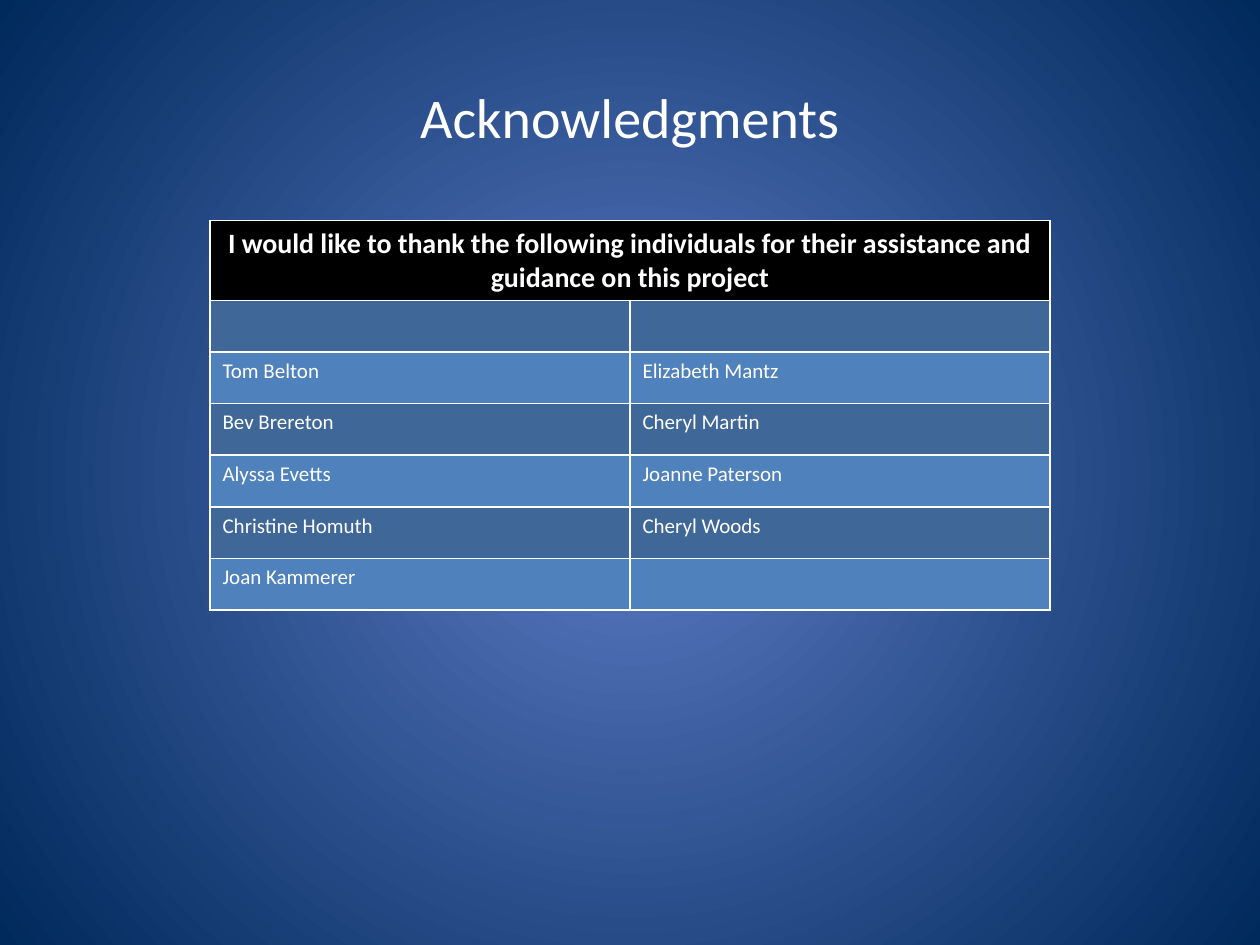
from lxml import etree
from pptx import Presentation
from pptx.dml.color import RGBColor
from pptx.enum.text import MSO_ANCHOR, PP_ALIGN
from pptx.oxml.ns import qn
from pptx.util import Inches, Pt

CENTER, LEFT = PP_ALIGN.CENTER, PP_ALIGN.LEFT
MIDDLE = MSO_ANCHOR.MIDDLE
FONT = "Calibri"
WHITE, BLACK = "FFFFFF", "000000"
BANDS = "3F6797", "4F81BD"
GLOW, NAVY = "5E7CC5", "00295C"
WIDE, HIGH = 10, 7.5
ROW = 0.41

THANKS = ("I would like to thank the following individuals "
          "for their assistance and guidance on this project")
NAMES = [
    ("", ""),
    ("Tom Belton", "Elizabeth Mantz"),
    ("Bev Brereton", "Cheryl Martin"),
    ("Alyssa Evetts", "Joanne Paterson"),
    ("Christine Homuth", "Cheryl Woods"),
    ("Joan Kammerer", ""),
]


def color(code):
    return RGBColor.from_string(code)


def write(frame, text, size, align=LEFT, bold=False):
    frame.text = text
    para = frame.paragraphs[0]
    para.alignment = align
    for font in [para.font] + [run.font for run in para.runs]:
        font.name, font.size, font.bold = FONT, Pt(size), bold
        font.color.rgb = color(WHITE)


def backdrop(slide):
    """Fill the background with a glow that spreads from the centre."""
    fill = slide.background.fill
    fill.gradient()
    for stop, code in zip(fill.gradient_stops, (GLOW, NAVY)):
        stop.color.rgb = color(code)
    grad = slide.element.find(".//" + qn("a:gradFill"))
    grad.remove(grad.find(qn("a:lin")))
    path = etree.SubElement(grad, qn("a:path"), path="circle")
    sides = dict.fromkeys("ltrb", "50000")
    etree.SubElement(path, qn("a:fillToRect"), **sides)


def title(slide, box, text):
    frame = slide.shapes.add_textbox(*map(Inches, box)).text_frame
    frame.word_wrap = True
    frame.vertical_anchor = MIDDLE
    write(frame, text, 32, CENTER)


def border(cell):
    props = cell._tc.get_or_add_tcPr()
    for spot, side in enumerate(("lnL", "lnR", "lnT", "lnB")):
        line = etree.Element(qn("a:" + side), w=str(Pt(1)))
        fill = etree.SubElement(line, qn("a:solidFill"))
        etree.SubElement(fill, qn("a:srgbClr"), val=WHITE)
        props.insert(spot, line)


def paint(cell, code):
    cell.fill.solid()
    cell.fill.fore_color.rgb = color(code)
    border(cell)


def roster(slide, box, head, names):
    """Place a merged heading over banded rows of names."""
    rows, cols = len(names) + 1, len(names[0])
    table = slide.shapes.add_table(rows, cols, *map(Inches, box)).table
    for row in table.rows:
        row.height = Inches(box[3] / rows)
    for col in range(cols):
        paint(table.cell(0, col), BLACK)
    top = table.cell(0, 0)
    top.merge(table.cell(0, cols - 1))
    write(top.text_frame, head, 16, CENTER, True)
    for row, pair in enumerate(names, 1):
        for col, name in enumerate(pair):
            cell = table.cell(row, col)
            paint(cell, BANDS[(row - 1) % 2])
            write(cell.text_frame, name, 12)


def main():
    deck = Presentation()
    deck.slide_width, deck.slide_height = Inches(WIDE), Inches(HIGH)
    slide = deck.slides.add_slide(deck.slide_layouts[6])
    backdrop(slide)
    title(slide, (WIDE * 0.05, HIGH * 0.04, WIDE * 0.9, HIGH / 6),
          "Acknowledgments")
    roster(slide, (WIDE / 6, 1.75, WIDE * 2 / 3, ROW * (len(NAMES) + 1)),
           THANKS, NAMES)
    deck.save("out.pptx")


if __name__ == "__main__":
    main()
